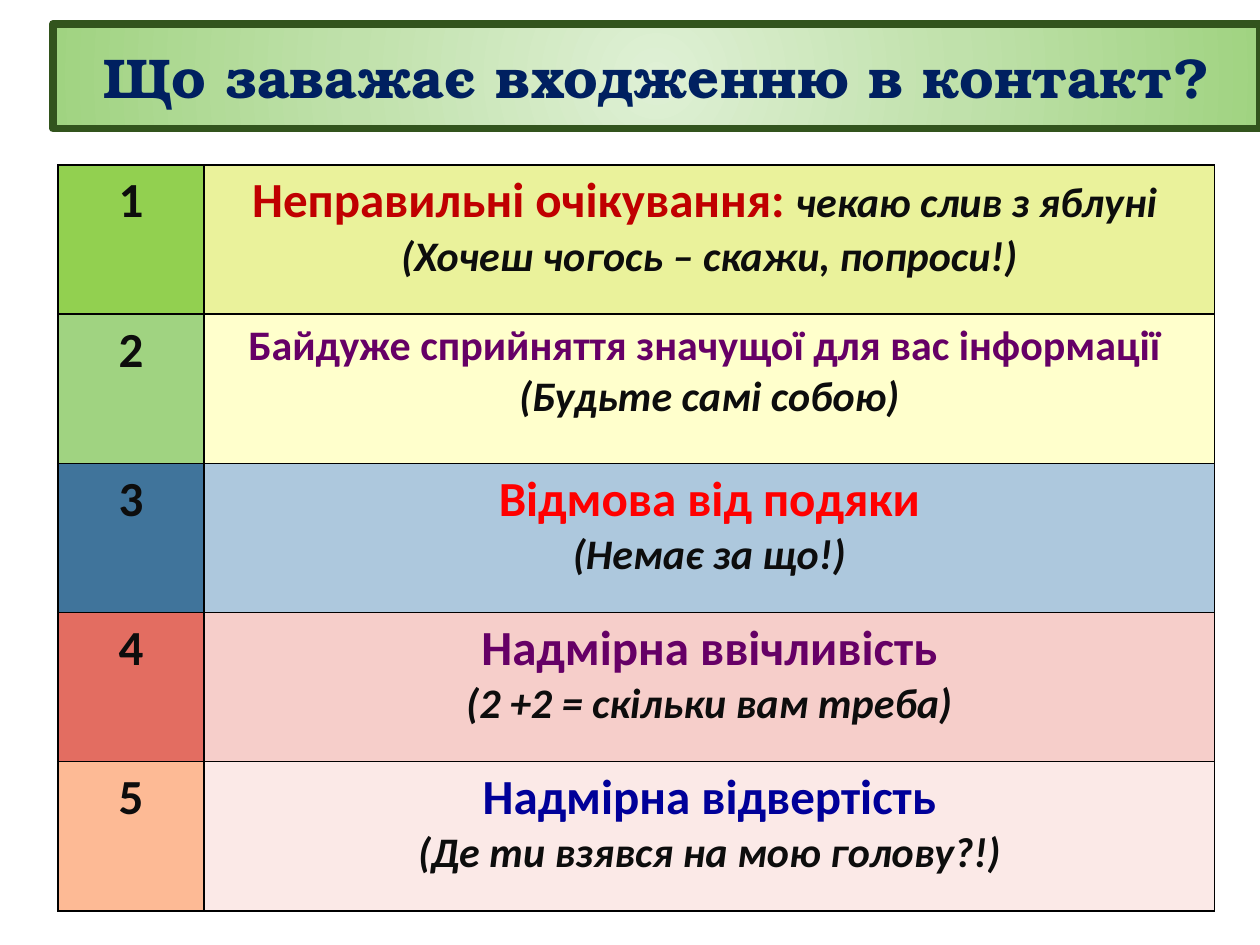
"""Build a slide listing five barriers to making contact."""
from pptx import Presentation
from pptx.dml.color import RGBColor
from pptx.enum.text import MSO_ANCHOR, MSO_AUTO_SIZE, PP_ALIGN
from pptx.oxml import parse_xml
from pptx.util import Inches, Pt

CENTER = PP_ALIGN.CENTER
MIDDLE = MSO_ANCHOR.MIDDLE
FIXED = MSO_AUTO_SIZE.NONE
NS = 'xmlns:a="http://schemas.openxmlformats.org/drawingml/2006/main"'
DARK = "0D0D0D"


def color(code):
    """Turn a hex string into a colour."""
    return RGBColor.from_string(code)


def add_run(para, text, size, code, italic=False, face="Calibri"):
    """Add one bold run to a centred paragraph."""
    para.alignment = CENTER
    run = para.add_run()
    run.text = text
    font = run.font
    font.name, font.size = face, Pt(size)
    font.bold, font.italic = True, italic
    font.color.rgb = color(code)


prs = Presentation()
prs.slide_width, prs.slide_height = Inches(10), Inches(7.5)
slide = prs.slides.add_slide(prs.slide_layouts[5])

title = slide.shapes.title
title.left, title.top = Inches(0.42), Inches(0.19)
title.width, title.height = Inches(9.58), Inches(0.83)
props = title.element.spPr
props.append(parse_xml(
    f'<a:prstGeom {NS} prst="roundRect"><a:avLst>'
    '<a:gd name="adj" fmla="val 0"/></a:avLst></a:prstGeom>'))
stops = "".join(
    f'<a:gs pos="{pos}000"><a:srgbClr val="{code}"/></a:gs>'
    for pos, code in ((0, "DFF0D5"), (50, "C0E1AB"), (100, "A0D381")))
props.append(parse_xml(
    f'<a:gradFill {NS} rotWithShape="1"><a:gsLst>{stops}</a:gsLst>'
    '<a:path path="circle"><a:fillToRect l="50000" t="50000" r="50000" b="50000"/>'
    '</a:path></a:gradFill>'))
title.line.color.rgb = color("32541D")
title.line.width = Pt(4.5)
frame = title.text_frame
frame.word_wrap = True
frame.auto_size = FIXED
frame.vertical_anchor = MIDDLE
add_run(frame.paragraphs[0], "Що заважає входженню в контакт?", 32, "002060",
        face="TeX Gyre Bonum")

rows = [
    ("92D050", "EAF29B", "Неправильні очікування: ", 28, "C00000",
     "(Хочеш чогось – скажи, попроси!)"),
    ("A0D381", "FFFFCC", "Байдуже сприйняття значущої для вас інформації ", 24, "660066",
     "(Будьте самі собою)"),
    ("40749B", "ADC8DD", "Відмова від подяки", 28, "FF0000", "(Немає за що!)"),
    ("E36D61", "F6CECA", "Надмірна ввічливість", 28, "660066",
     "(2 +2 = скільки вам треба)"),
    ("FDBA95", "FBE9E7", "Надмірна відвертість", 28, "000099",
     "(Де ти взявся на мою голову?!)"),
]
table = slide.shapes.add_table(len(rows), 2, Inches(0.46), Inches(1.31),
                               Inches(9.18), Inches(5.92)).table
table.first_row = table.horz_banding = False
table.columns[0].width, table.columns[1].width = Inches(1.16), Inches(8.02)

for index, (left, right, head, size, code, note) in enumerate(rows):
    for cell, fill in zip(table.rows[index].cells, (left, right)):
        edges = cell._tc.get_or_add_tcPr()
        for side in "LRTB":
            edges.append(parse_xml(
                f'<a:ln{side} {NS} w="12700"><a:solidFill>'
                f'<a:srgbClr val="000000"/></a:solidFill></a:ln{side}>'))
        cell.fill.solid()
        cell.fill.fore_color.rgb = color(fill)
    add_run(table.cell(index, 0).text_frame.paragraphs[0], str(index + 1), 28, DARK)
    frame = table.cell(index, 1).text_frame
    para = frame.paragraphs[0]
    add_run(para, head, size, code)
    if index == 0:
        add_run(para, "чекаю слив з яблуні ", 24, DARK, True)
    add_run(frame.add_paragraph(), note, 24, DARK, True)

prs.save("out.pptx")
